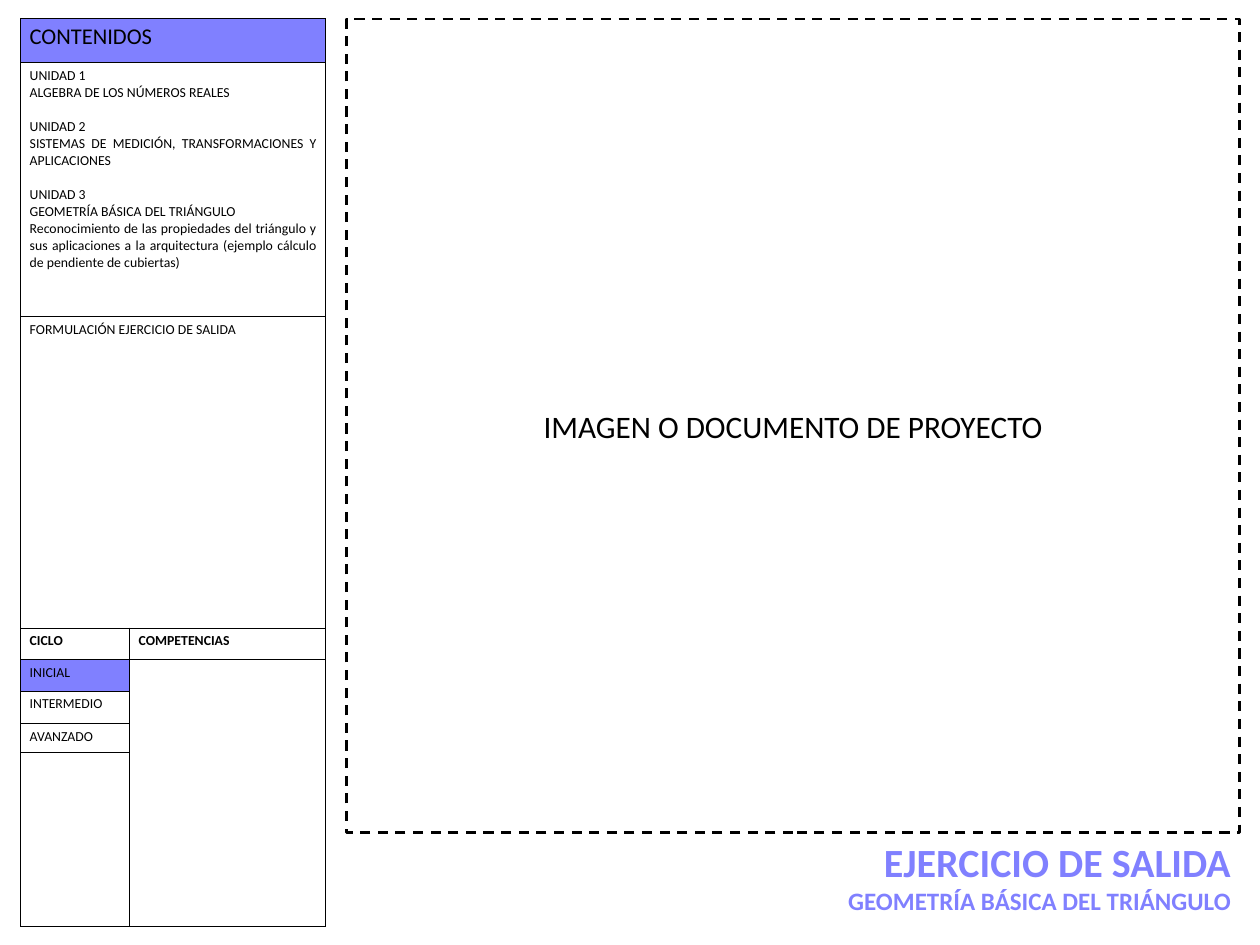
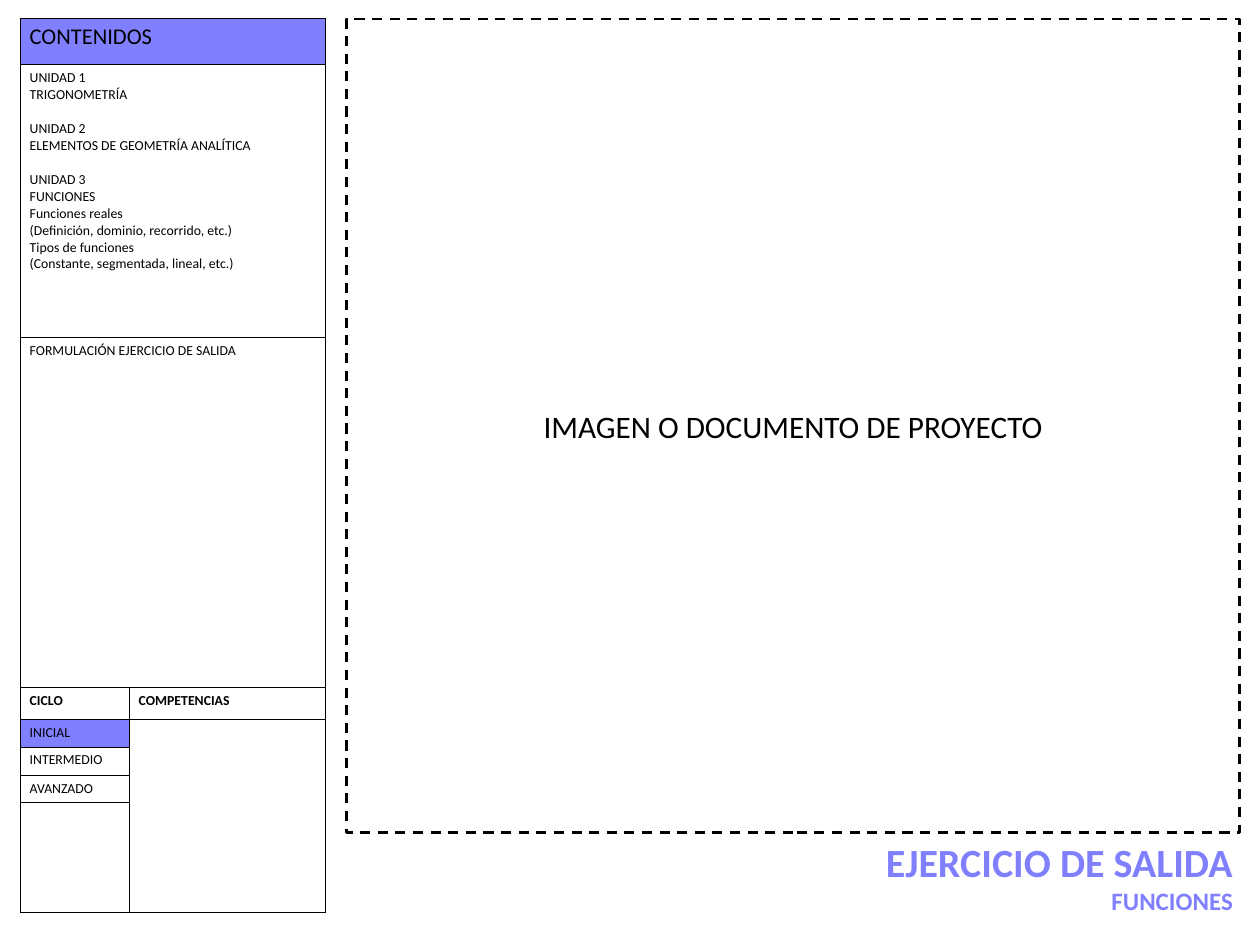
from lxml import etree
from pptx import Presentation
from pptx import util as u
from pptx.dml.color import RGBColor
from pptx.enum import dml, shapes, text
from pptx.oxml import ns

VIOLET = RGBColor(0x80, 0x80, 0xFF)
BLACK = RGBColor(0, 0, 0)
FONT = "Calibri"
GRID_COLUMNS, GRID_ROWS = 140, 105
TITLE_ONLY = 5

CYCLES = ["INICIAL", "INTERMEDIO", "AVANZADO"]
CYCLE_ROW = 4
THIN_BELOW = {1, 4, 5, 6, 7}
SIDEBAR_COLUMNS = [12.1, 21.8]

EXERCISES = [
    {
        "topic": "GEOMETRÍA BÁSICA DEL TRIÁNGULO",
        "title_left": 76.1,
        "rows": [4.9, 28.2, 34.6, 3.5, 3.5, 3.6, 3.2, 19.3],
        "contents": [
            "UNIDAD 1",
            "ALGEBRA DE LOS NÚMEROS REALES",
            "UNIDAD 2",
            "SISTEMAS DE MEDICIÓN, TRANSFORMACIONES Y APLICACIONES",
            "UNIDAD 3",
            "GEOMETRÍA BÁSICA DEL TRIÁNGULO",
            "Reconocimiento de las propiedades del triángulo y sus aplicaciones "
            "a la arquitectura (ejemplo cálculo de pendiente de cubiertas)",
        ],
    },
    {
        "topic": "FUNCIONES",
        "title_left": 76.3,
        "rows": [5.1, 30.3, 38.9, 3.6, 3, 3.2, 3, 12.2],
        "contents": [
            "UNIDAD 1",
            "TRIGONOMETRÍA",
            "UNIDAD 2",
            "ELEMENTOS DE GEOMETRÍA ANALÍTICA",
            "UNIDAD 3",
            "FUNCIONES",
            "Funciones reales",
            "(Definición, dominio, recorrido, etc.)",
            "Tipos de funciones",
            "(Constante, segmentada, lineal, etc.)",
        ],
    },
]


class ExerciseDeck:
    def __init__(self):
        self.presentation = Presentation()
        self.presentation.slide_width = u.Inches(14)
        self.presentation.slide_height = u.Inches(10.5)
        self.slide = None

    def columns(self, count):
        return round(self.presentation.slide_width * count / GRID_COLUMNS)

    def rows(self, count):
        return round(self.presentation.slide_height * count / GRID_ROWS)

    def box(self, left, top, width, height):
        return self.columns(left), self.rows(top), self.columns(width), self.rows(height)

    def start_slide(self):
        layout = self.presentation.slide_layouts[TITLE_ONLY]
        self.slide = self.presentation.slides.add_slide(layout)

    def format_paragraph(self, paragraph, size, alignment, color=BLACK, bold=False):
        paragraph.alignment = alignment
        for run in paragraph.runs:
            run.font.name = FONT
            run.font.size = u.Pt(size)
            run.font.bold = bold
            run.font.color.rgb = color

    def title(self, topic, left):
        shape = self.slide.shapes.title
        shape.left, shape.top, shape.width, shape.height = self.box(left, 92.5, 61.7, 9.8)
        frame = shape.text_frame
        frame.text = f"EJERCICIO DE SALIDA\n{topic}"
        frame.word_wrap = True
        frame.auto_size = text.MSO_AUTO_SIZE.SHAPE_TO_FIT_TEXT
        frame.vertical_anchor = text.MSO_ANCHOR.TOP
        for paragraph, size in zip(frame.paragraphs, (32, 20)):
            self.format_paragraph(paragraph, size, text.PP_ALIGN.RIGHT, VIOLET, True)

    def project_frame(self):
        shape = self.slide.shapes.add_shape(
            shapes.MSO_SHAPE.RECTANGLE, *self.box(38.5, 2.1, 99.2, 90.4))
        shape.shadow.inherit = False
        shape.fill.background()
        shape.line.color.rgb = BLACK
        shape.line.width = u.Pt(2)
        shape.line.dash_style = dml.MSO_LINE.DASH
        frame = shape.text_frame
        frame.text = "IMAGEN O DOCUMENTO DE PROYECTO"
        frame.vertical_anchor = text.MSO_ANCHOR.MIDDLE
        self.format_paragraph(frame.paragraphs[0], 25, text.PP_ALIGN.CENTER)

    def cell_borders(self, cell, row):
        widths = {
            "L": 1,
            "R": 1,
            "T": 0.5 if row - 1 in THIN_BELOW else 1,
            "B": 0.5 if row in THIN_BELOW else 1,
        }
        properties = cell._tc.get_or_add_tcPr()
        for side, width in widths.items():
            line = etree.SubElement(properties, ns.qn(f"a:ln{side}"), w=str(u.Pt(width)))
            fill = etree.SubElement(line, ns.qn("a:solidFill"))
            etree.SubElement(fill, ns.qn("a:srgbClr"), val=str(BLACK))

    def cell_text(self, cell, lines, size=11, bold=False):
        cell.text_frame.text = "\n".join(lines)
        for index, paragraph in enumerate(cell.text_frame.paragraphs):
            self.format_paragraph(paragraph, size, text.PP_ALIGN.JUSTIFY, bold=bold)
            if index and lines[index].startswith("UNIDAD"):
                paragraph.space_before = u.Pt(13.5)
            if not paragraph.runs:
                paragraph._p.get_or_add_endParaRPr().set("sz", str(size * 100))

    def sidebar(self, contents, row_heights):
        table = self.slide.shapes.add_table(
            len(row_heights), len(SIDEBAR_COLUMNS),
            *self.box(2.3, 2.1, sum(SIDEBAR_COLUMNS), sum(row_heights))).table
        table.first_row = table.horz_banding = False
        for column, width in zip(table.columns, SIDEBAR_COLUMNS):
            column.width = self.columns(width)
        for row, height in zip(table.rows, row_heights):
            row.height = self.rows(height)

        entries = {
            (0, 0): ["CONTENIDOS"],
            (1, 0): contents,
            (2, 0): ["FORMULACIÓN EJERCICIO DE SALIDA"],
            (3, 0): ["CICLO"],
            (3, 1): ["COMPETENCIAS"],
        }
        entries.update({(CYCLE_ROW + i, 0): [cycle] for i, cycle in enumerate(CYCLES)})
        for row in range(len(row_heights)):
            for column in range(len(SIDEBAR_COLUMNS)):
                cell = table.cell(row, column)
                self.cell_borders(cell, row)
                if column == 0 and row in (0, CYCLE_ROW):
                    cell.fill.solid()
                    cell.fill.fore_color.rgb = VIOLET
                else:
                    cell.fill.background()
                self.cell_text(cell, entries.get((row, column), [""]),
                               size=18 if (row, column) == (0, 0) else 11, bold=row == 3)

        for row in range(3):
            table.cell(row, 0).merge(table.cell(row, 1))
        table.cell(CYCLE_ROW, 1).merge(table.cell(len(row_heights) - 1, 1))


def main():
    deck = ExerciseDeck()
    for exercise in EXERCISES:
        deck.start_slide()
        deck.title(exercise["topic"], exercise["title_left"])
        deck.project_frame()
        deck.sidebar(exercise["contents"], exercise["rows"])
    deck.presentation.save("out.pptx")


if __name__ == "__main__":
    main()
